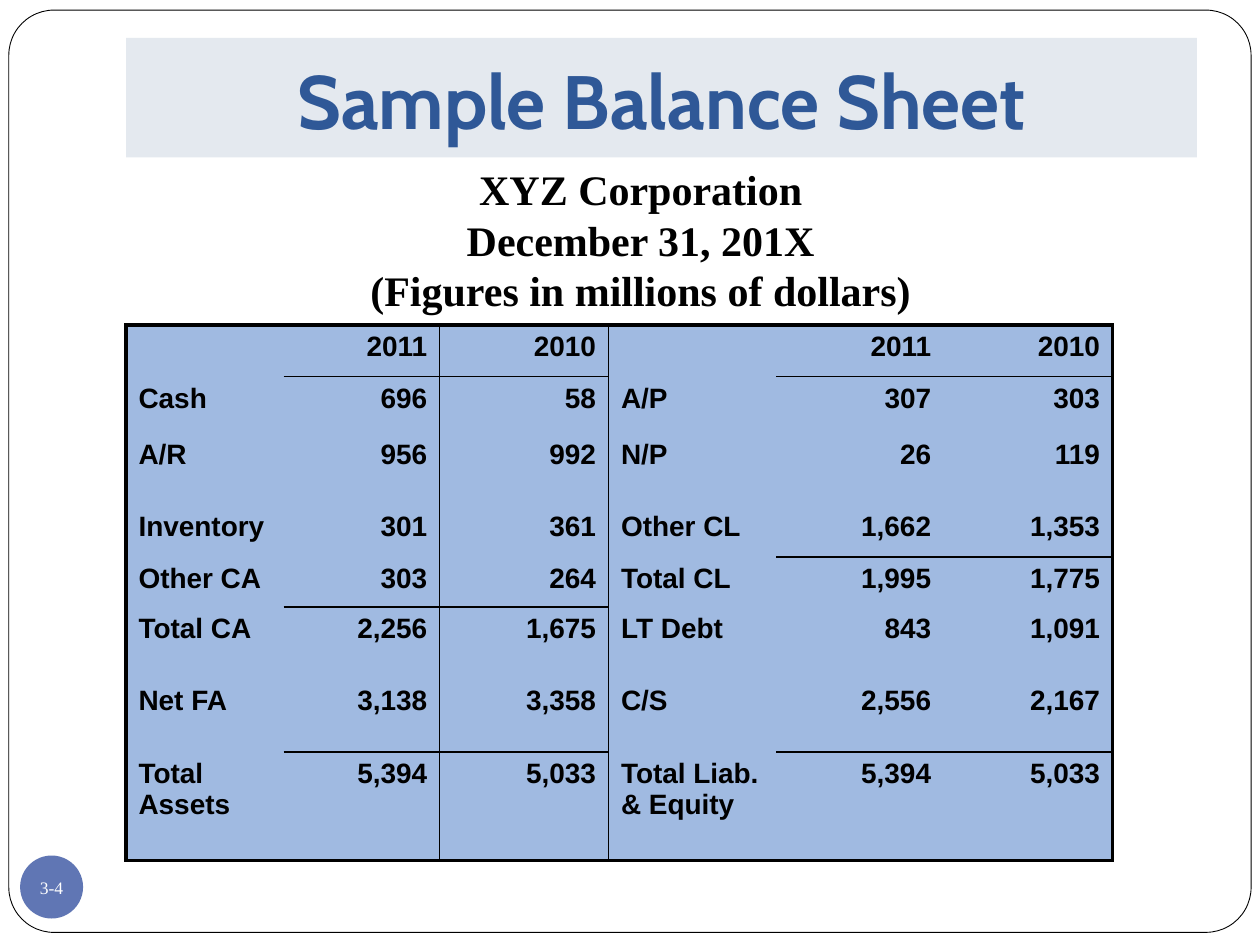
from lxml.etree import SubElement
from pptx import Presentation
from pptx.dml.color import RGBColor
from pptx.enum.shapes import MSO_SHAPE as Shape
from pptx.enum.text import MSO_ANCHOR as Anchor, MSO_AUTO_SIZE as AutoSize, PP_ALIGN as Align
from pptx.oxml.ns import qn
from pptx.util import Inches, Pt

BLACK = "000000"
WHITE = "FFFFFF"
TABLE_FILL = "A0BAE1"
OUTER_WIDTH, INNER_WIDTH = 2.25, 1

COLUMN_WIDTHS = [1.25, 1.24, 1.34, 1.33, 1.33, 1.34]
ROW_HEIGHTS = [0.41, 0.45, 0.57, 0.41, 0.4, 0.57, 0.58, 0.86]
BALANCE_SHEET = [
    ["", "2011", "2010", "", "2011", "2010"],
    ["Cash", "696", "58", "A/P", "307", "303"],
    ["A/R", "956", "992", "N/P", "26", "119"],
    ["Inventory", "301", "361", "Other CL", "1,662", "1,353"],
    ["Other CA", "303", "264", "Total CL", "1,995", "1,775"],
    ["Total CA", "2,256", "1,675", "LT Debt", "843", "1,091"],
    ["Net FA", "3,138", "3,358", "C/S", "2,556", "2,167"],
    ["Total Assets", "5,394", "5,033", "Total Liab. & Equity", "5,394", "5,033"],
]
LABEL_COLUMNS = (0, 3)
# Rows with a rule beneath them, for each column of figures
RULED_ROWS = {1: (0, 4, 6), 2: (0, 4, 6), 4: (0, 3, 6), 5: (0, 3, 6)}
RULED_COLUMNS = (1, 2)


def color(value):
    return RGBColor.from_string(value)


def set_fill(item, value):
    item.fill.solid()
    item.fill.fore_color.rgb = color(value)


def add_text(paragraph, text, font, size, value, bold=False, align=Align.CENTER):
    paragraph.alignment = align
    run = paragraph.add_run()
    run.text = text
    run.font.name = font
    run.font.size = Pt(size)
    run.font.bold = bold
    run.font.color.rgb = color(value)


def add_panel(slide, kind, box, fill, line=None):
    shape = slide.shapes.add_shape(kind, *map(Inches, box))
    shape.shadow.inherit = False
    set_fill(shape, fill)
    if line:
        shape.line.color.rgb = color(line)
        shape.line.width = Pt(0.5)
    else:
        shape.line.fill.background()
    return shape


def add_frame(slide):
    frame = add_panel(slide, Shape.ROUNDED_RECTANGLE, (0.07, 0.08, 9.86, 7.32), WHITE, BLACK)
    frame.adjustments[0] = 0.049
    slide.shapes.title.element.addprevious(frame.element)


def add_page_number(slide):
    badge = add_panel(slide, Shape.OVAL, (0.16, 6.79, 0.5, 0.5), "6076B4")
    text_frame = badge.text_frame
    text_frame.margin_left = text_frame.margin_right = 0
    text_frame.margin_top = text_frame.margin_bottom = 0
    text_frame.word_wrap = False
    text_frame.vertical_anchor = Anchor.MIDDLE
    add_text(text_frame.paragraphs[0], "3-4", "Times New Roman", 10, WHITE)


def format_title(slide):
    title = slide.shapes.title
    title.left, title.top, title.width, title.height = map(Inches, (1, 0.3, 8.5, 0.95))
    set_fill(title, "E4E9EF")
    text_frame = title.text_frame
    text_frame.auto_size = AutoSize.NONE
    text_frame.vertical_anchor = Anchor.BOTTOM
    text_frame.margin_bottom = Inches(0.1)
    add_text(text_frame.paragraphs[0], "Sample Balance Sheet", "Cabin", 43.2, "2F5897", True)


def add_heading(slide):
    box = slide.shapes.add_textbox(*map(Inches, (1.92, 1.25, 6.33, 1.31)))
    text_frame = box.text_frame
    text_frame.word_wrap = True
    text_frame.auto_size = AutoSize.SHAPE_TO_FIT_TEXT
    lines = ["XYZ Corporation", "December 31, 201X", "(Figures in millions of dollars)"]
    for index, line in enumerate(lines):
        paragraph = text_frame.add_paragraph() if index else text_frame.paragraphs[0]
        add_text(paragraph, line, "Times New Roman", 24, BLACK, True)


def horizontal_width(edge, column):
    """Width of the line above row number edge, or 0 for none."""
    if edge in (0, len(ROW_HEIGHTS)):
        return OUTER_WIDTH
    return INNER_WIDTH if edge - 1 in RULED_ROWS.get(column, ()) else 0


def vertical_width(edge):
    """Width of the line left of column number edge, or 0 for none."""
    if edge in (0, len(COLUMN_WIDTHS)):
        return OUTER_WIDTH
    return INNER_WIDTH if edge - 1 in RULED_COLUMNS else 0


def set_borders(cell, row, column):
    properties = cell._tc.get_or_add_tcPr()
    widths = {
        "a:lnL": vertical_width(column),
        "a:lnR": vertical_width(column + 1),
        "a:lnT": horizontal_width(row, column),
        "a:lnB": horizontal_width(row + 1, column),
    }
    for tag, width in widths.items():
        line = SubElement(properties, qn(tag), w=str(int(Pt(width))))
        if width:
            fill = SubElement(line, qn("a:solidFill"))
            SubElement(fill, qn("a:srgbClr"), val=BLACK)
        else:
            SubElement(line, qn("a:noFill"))


def add_balance_table(slide):
    table = slide.shapes.add_table(
        len(ROW_HEIGHTS), len(COLUMN_WIDTHS), Inches(1), Inches(2.58),
        Inches(sum(COLUMN_WIDTHS)), Inches(sum(ROW_HEIGHTS)),
    ).table
    table.first_row = table.horz_banding = False
    for column, width in zip(table.columns, COLUMN_WIDTHS):
        column.width = Inches(width)
    for row, height in zip(table.rows, ROW_HEIGHTS):
        row.height = Inches(height)
    for row, values in enumerate(BALANCE_SHEET):
        for column, value in enumerate(values):
            cell = table.cell(row, column)
            set_borders(cell, row, column)
            set_fill(cell, TABLE_FILL)
            if value:
                align = Align.LEFT if column in LABEL_COLUMNS else Align.RIGHT
                add_text(cell.text_frame.paragraphs[0], value, "Arial", 16, BLACK, True, align)


def main():
    presentation = Presentation()
    presentation.slide_width = Inches(10)
    presentation.slide_height = Inches(7.5)
    slide = presentation.slides.add_slide(presentation.slide_layouts[5])
    add_frame(slide)
    format_title(slide)
    add_page_number(slide)
    add_balance_table(slide)
    add_heading(slide)
    presentation.save("out.pptx")


if __name__ == "__main__":
    main()
